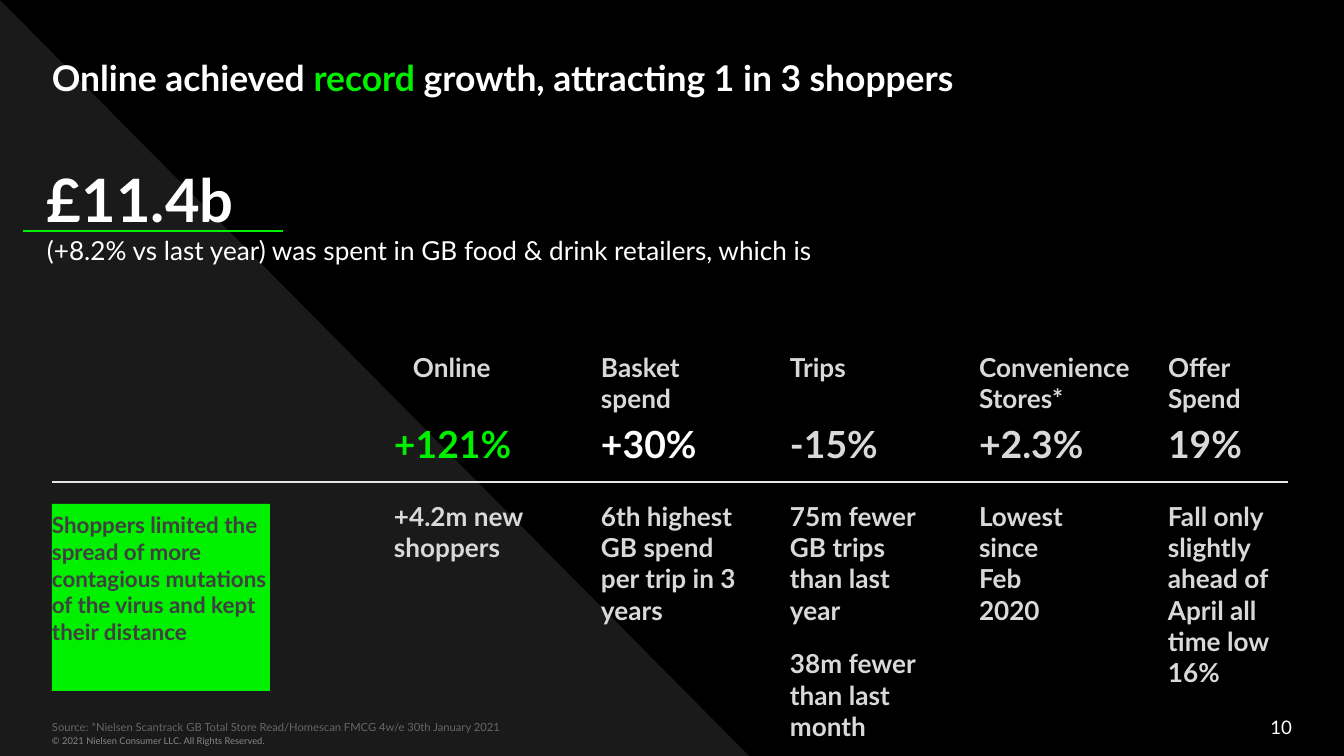
from lxml.etree import SubElement
from pptx import Presentation
from pptx.dml.color import RGBColor
from pptx.enum.shapes import MSO_CONNECTOR, MSO_SHAPE
from pptx.enum.text import MSO_ANCHOR, PP_ALIGN
from pptx.oxml.ns import qn
from pptx.util import Emu, Pt

COLORS = {
    "black": "000000", "panel": "1A1A1A", "white": "FFFFFF", "green": "00F000",
    "light": "D9D9D9", "rule": "E5E5E5", "dark": "404040",
    "source": "666666", "copyright": "888888",
}


def px(*lengths):
    return [Emu(round(length * 914400 / 134.4)) for length in lengths]


def write(shape, paragraphs, size, color, bold=False, inset=7, after=0):
    """Fill a shape; each paragraph is a list of (text, overrides) runs."""
    text_frame = shape.text_frame
    text_frame.word_wrap = True
    text_frame.vertical_anchor = MSO_ANCHOR.TOP
    text_frame.margin_left = text_frame.margin_right = 0
    text_frame.margin_top = text_frame.margin_bottom = px(inset)[0]
    for index, runs in enumerate(paragraphs):
        paragraph = text_frame.add_paragraph() if index else text_frame.paragraphs[0]
        paragraph.alignment = PP_ALIGN.LEFT
        paragraph.space_after = Pt(after)
        for text, changes in runs:
            run = paragraph.add_run()
            run.text = text
            run.font.name = "Lato"
            run.font.size = Pt(changes.get("size", size))
            run.font.bold = changes.get("bold", bold)
            run.font.color.rgb = RGBColor.from_string(COLORS[changes.get("color", color)])
    return text_frame


presentation = Presentation()
presentation.slide_width, presentation.slide_height = px(1344, 756)
slide = presentation.slides.add_slide(presentation.slide_layouts[6])
shapes = slide.shapes
slide.background.fill.solid()
slide.background.fill.fore_color.rgb = RGBColor.from_string(COLORS["black"])

# Background triangle and green message box
blocks = {}
for name, kind, box, color in [
    ("triangle", MSO_SHAPE.RIGHT_TRIANGLE, (0, 0, 751, 758), "panel"),
    ("message", MSO_SHAPE.RECTANGLE, (52, 504, 218, 187), "green"),
]:
    shape = shapes.add_shape(kind, *px(*box))
    shape.shadow.inherit = False
    shape.fill.solid()
    shape.fill.fore_color.rgb = RGBColor.from_string(COLORS[color])
    shape.line.fill.background()
    blocks[name] = shape
message = ("Shoppers limited the spread of more contagious mutations "
           "of the virus and kept their distance")
write(blocks["message"], [[(message, {})]], 12, "dark", True, after=12)

# Title
title = shapes.add_textbox(*px(52, 43, 1239, 58))
write(title, [[("Online achieved ", {}), ("record", {"color": "green"}),
               (" growth, attracting 1 in 3 shoppers", {})]], 19, "white", True, 13)

# Headline figure
headline = shapes.add_textbox(*px(47, 156, 995, 173))
write(headline, [
    [("£11.4b", {"size": 32, "bold": True})],
    [("(+8.2% vs last year) was spent in GB food & drink retailers, which is", {})],
], 14, "white")

# Metric columns: heading, value and notes, each with its width
first_left, second_left, step = 394, 601, 189
metrics = [
    ("Online", 101, "+121%", 134, "green", ["+4.2m new shoppers"], 171),
    ("Basket spend", 101, "+30%", 122, "white",
     ["6th highest GB spend per trip in 3 years"], 151),
    ("Trips", 101, "-15%", 122, "light",
     ["75m fewer GB trips than last year", "38m fewer than last month"], 142),
    ("Convenience Stores*", 168, "+2.3%", 155, "light", ["Lowest since Feb 2020"], 101),
    ("Offer Spend", 101, "19%", 101, "light",
     ["Fall only slightly ahead of April all time low 16%"], 120),
]
for index, (heading, heading_width, value, value_width, color, notes, notes_width) in enumerate(metrics):
    left = second_left + (index - 1) * step if index else first_left
    heading_left = left if index else left + 19
    for box, texts, size, text_color in [
        ((heading_left, 344, heading_width, 44), [heading], 14, "light"),
        ((left, 414, value_width, 44), [value], 20, color),
        ((left, 493, notes_width, 187), notes, 14, "light"),
    ]:
        textbox = shapes.add_textbox(*px(*box))
        write(textbox, [[(text, {})] for text in texts], size, text_color, True, after=12)

# Rules
for start, end, y, color, width in [
    (52, 1288, 482, "rule", 0.75),
    (23, 283, 231, "green", 1.5),
]:
    line = shapes.add_connector(MSO_CONNECTOR.STRAIGHT, *px(start, y, end, y))
    line.line.color.rgb = RGBColor.from_string(COLORS[color])
    line.line.width = Pt(width)
    SubElement(line._element.spPr, qn("a:effectLst"))

# Footer
source = shapes.add_textbox(*px(52, 714, 1199, 27))
source_text = "Source: *Nielsen Scantrack GB Total Store Read/Homescan FMCG 4w/e 30th January 2021"
write(source, [[(source_text, {})]], 6, "source", inset=13).vertical_anchor = MSO_ANCHOR.BOTTOM
copyright_line = shapes.add_textbox(*px(52, 730, 745, 27))
write(copyright_line, [[("© 2021 Nielsen Consumer LLC. All Rights Reserved.", {})]], 5, "copyright")
page_number = shapes.add_textbox(*px(989, 707, 303, 40))
page_frame = write(page_number, [[("10", {})]], 10, "white")
page_frame.vertical_anchor = MSO_ANCHOR.MIDDLE
page_frame.paragraphs[0].alignment = PP_ALIGN.RIGHT

presentation.save("out.pptx")
